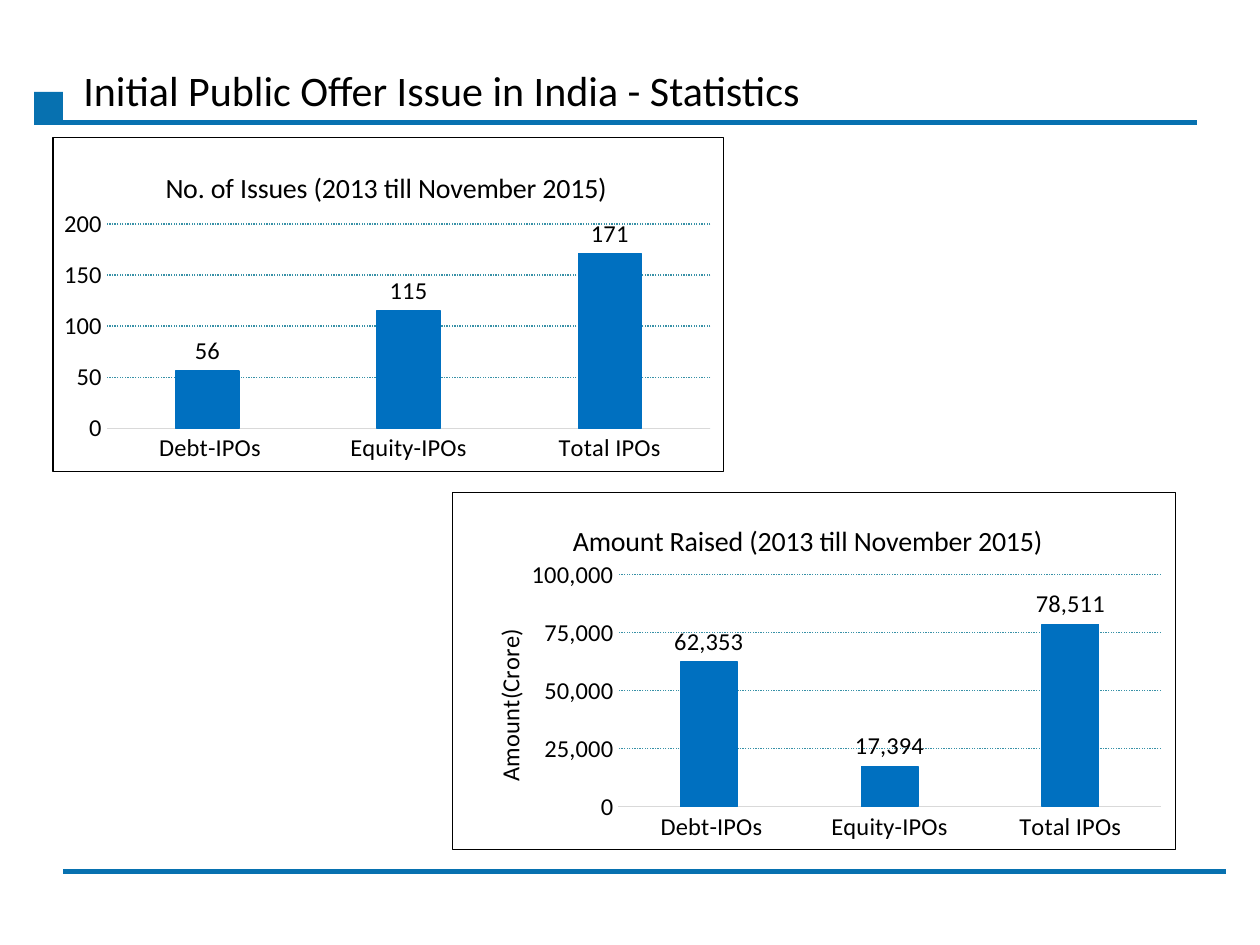
import pptx
import pptx.chart.data
import pptx.dml.color
import pptx.enum.chart
import pptx.enum.dml
import pptx.enum.shapes
import pptx.enum.text
import pptx.oxml
import pptx.oxml.ns
import pptx.util
from pptx.util import Pt

COLORS = {"rule": "0771B0", "bar": "0070C0", "grid": "3891A7",
          "axis": "D9D9D9", "text": "000000"}
FONT = "Calibri"
CATEGORIES = [" Debt-IPOs", "Equity-IPOs", "Total IPOs"]


def rgb(name):
    return pptx.dml.color.RGBColor.from_string(COLORS[name])


def format_font(font, size, color="text"):
    font.name, font.size, font.bold = FONT, Pt(size), False
    font.color.rgb = rgb(color)


def write_text(text_frame, text, size=14, color="text"):
    paragraph = text_frame.paragraphs[0]
    run = paragraph.add_run()
    run.text = text
    format_font(run.font, size, color)


def format_line(line, color, width=0.75):
    line.color.rgb = rgb(color)
    line.width = Pt(width)


def add_rule(slide, left, y, right):
    rule = slide.shapes.add_connector(
        pptx.enum.shapes.MSO_CONNECTOR.STRAIGHT, Pt(left), Pt(y), Pt(right), Pt(y))
    format_line(rule.line, "rule", 2.5)
    properties = rule._element.spPr
    properties.append(pptx.oxml.parse_xml(
        f'<a:effectLst {pptx.oxml.ns.nsdecls("a")}/>'))


def add_square(slide, left, top, width, height):
    square = slide.shapes.add_shape(
        pptx.enum.shapes.MSO_SHAPE.RECTANGLE, Pt(left), Pt(top), Pt(width), Pt(height))
    square.shadow.inherit = False
    square.fill.solid()
    square.fill.fore_color.rgb = rgb("rule")
    square.line.fill.background()


def add_heading(slide, text, left, top, width, height):
    box = slide.shapes.add_textbox(Pt(left), Pt(top), Pt(width), Pt(height))
    box.text_frame.word_wrap = False
    box.text_frame.auto_size = pptx.enum.text.MSO_AUTO_SIZE.SHAPE_TO_FIT_TEXT
    write_text(box.text_frame, text, size=24)


def set_layout(element, index, target="", **fractions):
    """Place a chart part by fractions of the chart's size."""
    for old in element.findall(pptx.oxml.ns.qn("c:layout")):
        element.remove(old)
    modes = "".join(f'<c:{key}Mode val="edge"/>' for key in "xy")
    values = "".join(f'<c:{key} val="{value}"/>' for key, value in fractions.items())
    element.insert(index, pptx.oxml.parse_xml(
        f'<c:layout {pptx.oxml.ns.nsdecls("c")}><c:manualLayout>'
        f'{target}{modes}{values}</c:manualLayout></c:layout>'))


def add_border(chart):
    chart_element = chart._chartSpace.find(pptx.oxml.ns.qn("c:chart"))
    chart_element.addnext(pptx.oxml.parse_xml(
        f'<c:spPr {pptx.oxml.ns.nsdecls("c", "a")}><a:noFill/>'
        f'<a:ln w="{Pt(0.75)}"><a:solidFill><a:srgbClr val="{COLORS["text"]}"/>'
        '</a:solidFill></a:ln></c:spPr>'))


def add_title(owner, text, size, x, y):
    """Title a chart or an axis."""
    title = owner.chart_title if hasattr(owner, "chart_title") else owner.axis_title
    write_text(title.text_frame, text, size=size)
    set_layout(title._element, 1, x=x, y=y)


def format_axes(chart, number_format, major_unit):
    category_axis, value_axis = chart.category_axis, chart.value_axis
    for axis in (category_axis, value_axis):
        axis.major_tick_mark = pptx.enum.chart.XL_TICK_MARK.NONE
        axis.minor_tick_mark = pptx.enum.chart.XL_TICK_MARK.NONE
        format_font(axis.tick_labels.font, 14)
    format_line(category_axis.format.line, "axis")
    value_axis.format.line.fill.background()
    value_axis.minimum_scale = 0
    value_axis.maximum_scale = 4 * major_unit
    value_axis.major_unit = major_unit
    value_axis.tick_labels.number_format = number_format
    value_axis.tick_labels.number_format_is_linked = False
    grid = value_axis.major_gridlines.format.line
    format_line(grid, "grid")
    grid.dash_style = pptx.enum.dml.MSO_LINE.ROUND_DOT


def add_column_chart(slide, title, values, box, plot_area, title_at,
                     major_unit, number_format="General"):
    data = pptx.chart.data.CategoryChartData(number_format=number_format)
    data.categories = CATEGORIES
    data.add_series("Series 1", values)
    chart = slide.shapes.add_chart(
        pptx.enum.chart.XL_CHART_TYPE.COLUMN_CLUSTERED,
        *[Pt(length) for length in box], data).chart
    chart.has_legend = False
    format_font(chart.font, 14)
    add_border(chart)
    add_title(chart, title, 16, *title_at)
    format_axes(chart, number_format, major_unit)

    # Columns and their value labels
    plot = chart.plots[0]
    plot.vary_by_categories = False
    plot.gap_width, plot.overlap = 219, -27
    series = plot.series[0]
    series.format.fill.solid()
    series.format.fill.fore_color.rgb = rgb("bar")
    format_line(series.format.line, "bar")
    labels = series.data_labels
    labels.show_value = True
    labels.position = pptx.enum.chart.XL_LABEL_POSITION.OUTSIDE_END
    labels.number_format = number_format
    labels.number_format_is_linked = False
    format_font(labels.font, 14)

    set_layout(chart._chartSpace.chart.plotArea, 0,
               '<c:layoutTarget val="inner"/>', **plot_area)
    return chart


def main():
    presentation = pptx.Presentation()
    presentation.slide_width, presentation.slide_height = Pt(720), Pt(540)
    slide = presentation.slides.add_slide(presentation.slide_layouts[6])

    # Heading and rules
    add_rule(slide, 19.5, 70, 684)
    add_square(slide, 19.5, 52.5, 16.5, 18)
    add_rule(slide, 36, 498, 700.5)
    add_heading(slide, "Initial Public Offer Issue in India - Statistics",
                40.5, 33.5, 428.5, 36)

    # Number of issues
    add_column_chart(
        slide, "No. of Issues (2013 till November 2015)", [56, 115, 171],
        box=(30, 78, 384, 192), title_at=(0.16, 0.08), major_unit=50,
        plot_area={"x": 0.08, "y": 0.26, "w": 0.9, "h": 0.61})

    # Amount raised
    amounts = add_column_chart(
        slide, "Amount Raised (2013 till November 2015)", [62353, 17394, 78511],
        box=(258, 281, 414, 205), title_at=(0.16, 0.07), major_unit=25000,
        number_format="#,##0",
        plot_area={"x": 0.23, "y": 0.23, "w": 0.75, "h": 0.65})
    add_title(amounts.value_axis, "Amount(Crore)", 14, 0.05, 0.37)

    presentation.save("out.pptx")


if __name__ == "__main__":
    main()
